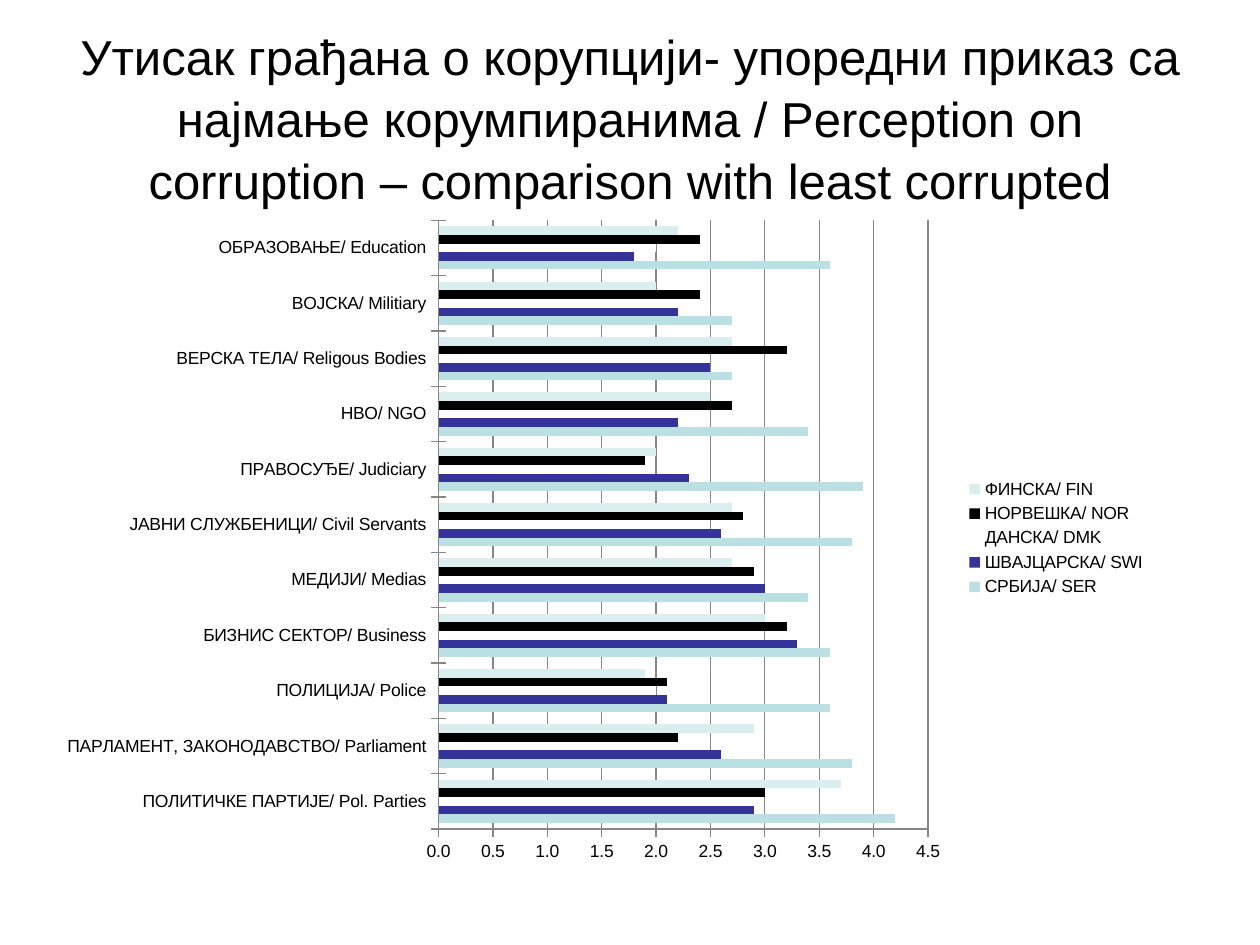
import pptx
import pptx.chart.data
import pptx.dml.color
import pptx.enum.chart
import pptx.enum.text
import pptx.util
from lxml import etree
from pptx.util import Cm, Pt

RGBColor = pptx.dml.color.RGBColor
BLACK = RGBColor(0x00, 0x00, 0x00)
WHITE = RGBColor(0xFF, 0xFF, 0xFF)
GREY = RGBColor(0x86, 0x86, 0x86)
AQUA = RGBColor(0xBB, 0xE0, 0xE3)
INDIGO = RGBColor(0x33, 0x33, 0x99)
PALE_AQUA = RGBColor(0xDA, 0xED, 0xEF)

TITLE = ("Утисак грађана о корупцији- упоредни приказ са најмање корумпиранима"
         " / Perception on corruption – comparison with least corrupted")

INSTITUTIONS = [
    "ПОЛИТИЧКЕ ПАРТИЈЕ/ Pol. Parties",
    "ПАРЛАМЕНТ, ЗАКОНОДАВСТВО/ Parliament",
    "ПОЛИЦИЈА/ Police",
    "БИЗНИС СЕКТОР/ Business",
    "МЕДИЈИ/ Medias",
    "JAВНИ СЛУЖБЕНИЦИ/ Civil Servants",
    "ПРАВОСУЂЕ/ Judiciary",
    "НВО/ NGO",
    "ВЕРСКА ТЕЛА/ Religous Bodies",
    "ВОЈСКА/ Militiary",
    "ОБРАЗОВАЊЕ/ Education",
]

COUNTRIES = [
    ("СРБИЈА/ SER", AQUA, [4.2, 3.8, 3.6, 3.6, 3.4, 3.8, 3.9, 3.4, 2.7, 2.7, 3.6]),
    ("ШВАЈЦАРСКА/ SWI", INDIGO, [2.9, 2.6, 2.1, 3.3, 3, 2.6, 2.3, 2.2, 2.5, 2.2, 1.8]),
    ("ДАНСКА/ DMK", WHITE, [2.8, 2.3, 2, 2.8, 2.6, 2.5, 1.6, 2.2, 2.3, 2.2, 2]),
    ("НОРВЕШКА/ NOR", BLACK, [3, 2.2, 2.1, 3.2, 2.9, 2.8, 1.9, 2.7, 3.2, 2.4, 2.4]),
    ("ФИНСКА/ FIN", PALE_AQUA, [3.7, 2.9, 1.9, 3, 2.7, 2.7, 2, 2.5, 2.7, 2, 2.2]),
]


class SlideBuilder:
    font_name = "Arial"

    def __init__(self, slide):
        self.slide = slide

    def style_font(self, font, size):
        font.name = self.font_name
        font.size = Pt(size)
        font.color.rgb = BLACK

    def title(self, text, left, top, width, height):
        frame = self.slide.shapes.add_textbox(left, top, width, height).text_frame
        frame.word_wrap = True
        frame.vertical_anchor = pptx.enum.text.MSO_ANCHOR.MIDDLE
        heading = frame.paragraphs[0]
        heading.text = text
        heading.alignment = pptx.enum.text.PP_ALIGN.CENTER
        heading.line_spacing = 1.05
        self.style_font(heading.font, 28)

    def place(self, element, x, y, w, h, inner=False):
        """Fix a chart part at fractions of the chart area."""
        qn = pptx.oxml.ns.qn
        for old_layout in element.findall(qn("c:layout")):
            element.remove(old_layout)
        layout = etree.Element(qn("c:layout"))
        manual = etree.SubElement(layout, qn("c:manualLayout"))
        settings = [("layoutTarget", "inner")] if inner else []
        settings += [("xMode", "edge"), ("yMode", "edge"),
                     ("x", x), ("y", y), ("w", w), ("h", h)]
        for tag, value in settings:
            etree.SubElement(manual, qn("c:" + tag)).set("val", str(value))
        position = element.find(qn("c:legendPos"))
        if position is None:
            element.insert(0, layout)
        else:
            position.addnext(layout)

    def bar_chart(self, categories, series_rows, left, top, width, height):
        data = pptx.chart.data.CategoryChartData(number_format="0.0")
        data.categories = categories
        for name, _, values in series_rows:
            data.add_series(name, values)
        chart = self.slide.shapes.add_chart(
            pptx.enum.chart.XL_CHART_TYPE.BAR_CLUSTERED,
            left, top, width, height, data).chart
        chart.has_title = False
        self.style_font(chart.font, 10)

        plot = chart.plots[0]
        plot.gap_width = 140
        plot.overlap = 0
        plot.vary_by_categories = False
        for series, (_, color, _) in zip(plot.series, series_rows):
            series.format.fill.solid()
            series.format.fill.fore_color.rgb = color
            series.format.line.fill.background()
            series.invert_if_negative = False

        scores = chart.value_axis
        scores.minimum_scale, scores.maximum_scale = 0, 4.5
        scores.major_unit = 0.5
        scores.has_major_gridlines = True
        scores.tick_labels.number_format = "0.0"
        scores.tick_labels.number_format_is_linked = False
        for axis in (chart.category_axis, scores):
            axis.major_tick_mark = pptx.enum.chart.XL_TICK_MARK.CROSS
        for part in (chart.category_axis, scores, scores.major_gridlines):
            part.format.line.color.rgb = GREY
            part.format.line.width = Pt(0.75)

        chart.has_legend = True
        chart.legend.position = pptx.enum.chart.XL_LEGEND_POSITION.RIGHT
        chart.legend.include_in_layout = False
        plot_area = chart.element.chart.plotArea
        self.place(plot_area, 0.35, 0.02, 0.44, 0.91, inner=True)
        self.place(chart.legend._element, 0.82, 0.4, 0.17, 0.19)


def main():
    deck = pptx.Presentation()
    deck.slide_width, deck.slide_height = Cm(25.4), Cm(19.05)
    builder = SlideBuilder(deck.slides.add_slide(deck.slide_layouts[6]))
    builder.title(TITLE, Cm(1.27), Cm(0.76), Cm(22.86), Cm(3.18))
    builder.bar_chart(INSTITUTIONS, COUNTRIES, Cm(0.99), Cm(4.17), Cm(22.43), Cm(13.49))
    deck.save("out.pptx")


if __name__ == "__main__":
    main()
